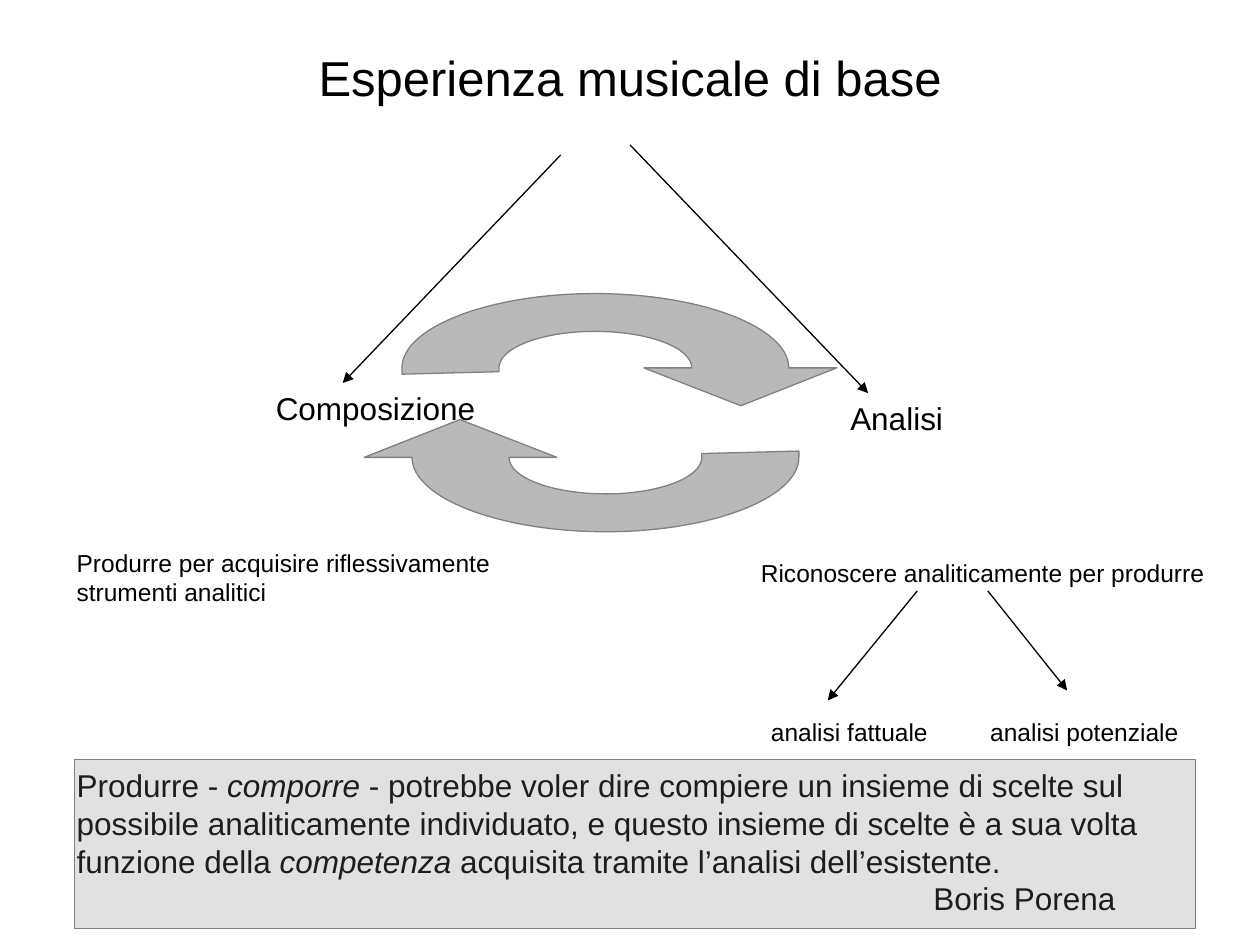
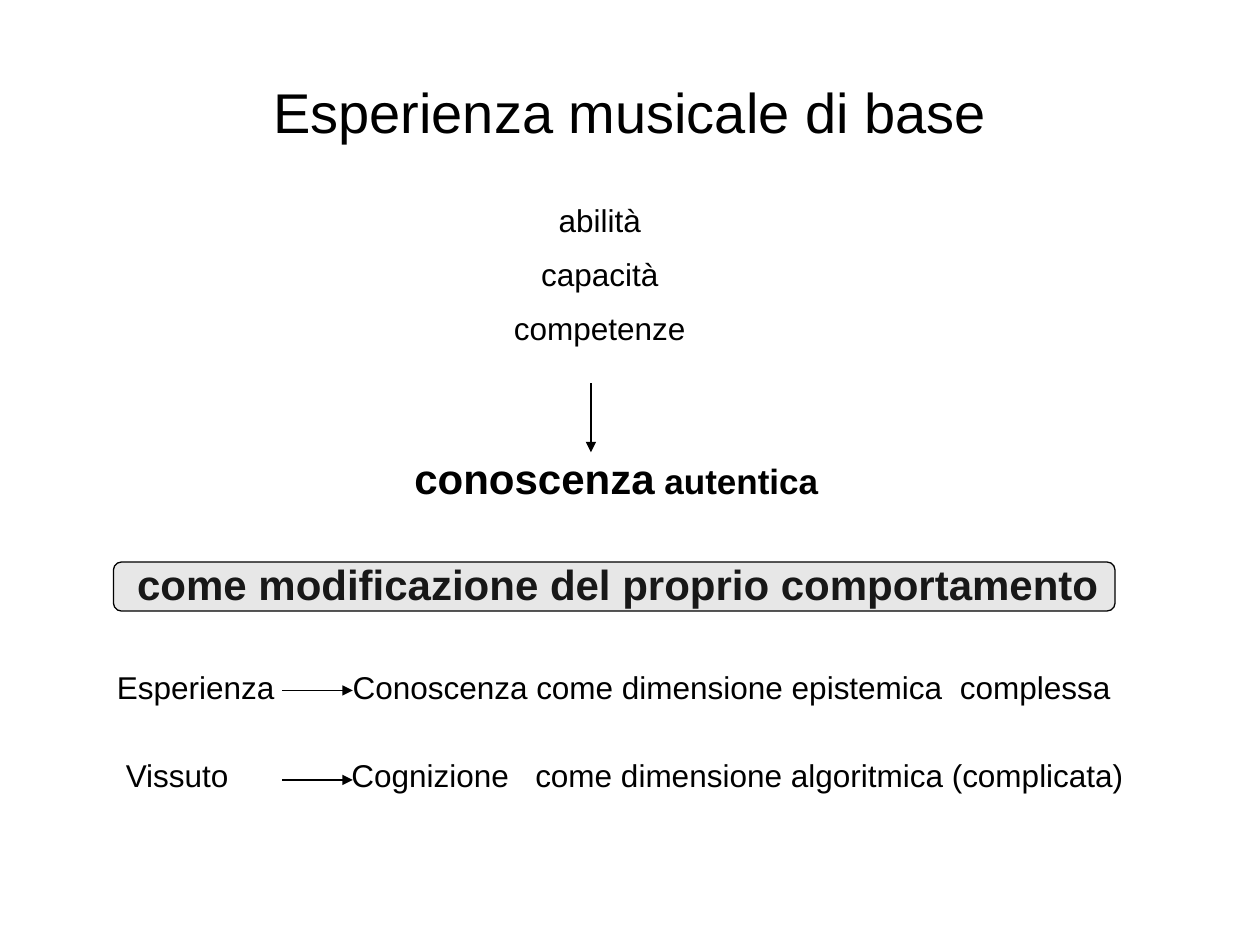
from lxml.etree import SubElement
from pptx import Presentation
from pptx.dml.color import RGBColor
from pptx.enum.shapes import MSO_CONNECTOR, MSO_SHAPE
from pptx.enum.text import MSO_ANCHOR, MSO_AUTO_SIZE, PP_ALIGN
from pptx.oxml.ns import qn
from pptx.util import Inches, Pt

FONT = "Arial"
BLACK = "000000"
GREY = "808080"
LINE_WIDTH = Pt(0.75)
TITLE = "Esperienza musicale di base"

# Upper arrow of the cycle: one point is a straight step, three are a curve.
CYCLE_START = (5.49, 2.92)
CYCLE_STEPS = [
    [(5.49, 2.76), (5.15, 2.63), (4.72, 2.63)],
    [(4.3, 2.63), (3.96, 2.76), (3.96, 2.92)],
    [(3.96, 2.93), (3.96, 2.94), (3.96, 2.95)],
    [(3.19, 2.97)],
    [(3.19, 2.95), (3.19, 2.94), (3.19, 2.92)],
    [(3.19, 2.6), (3.88, 2.33), (4.72, 2.33)],
    [(5.57, 2.33), (6.26, 2.6), (6.26, 2.92)],
    [(6.64, 2.92)],
    [(5.88, 3.22)],
    [(5.11, 2.92)],
]


def color(hex_string):
    return RGBColor.from_string(hex_string)


def write(frame, paragraphs, size=18, bold=False, align=PP_ALIGN.LEFT,
          gap=0, last_indent=0, tabs=()):
    """Fill a text frame; each paragraph is a string or a list of (text, format) runs."""
    frame.word_wrap = True
    for number, content in enumerate(paragraphs):
        paragraph = frame.paragraphs[0] if number == 0 else frame.add_paragraph()
        paragraph.alignment = align
        if number:
            paragraph.space_before = Pt(gap)
        properties = paragraph._p.get_or_add_pPr()
        if last_indent and number == len(paragraphs) - 1:
            properties.set("marL", str(Inches(last_indent)))
        if tabs:
            stops = SubElement(properties, qn("a:tabLst"))
            for position in tabs:
                SubElement(stops, qn("a:tab"), pos=str(Inches(position)), algn="l")
        runs = [(content, {})] if isinstance(content, str) else content
        for text, look in runs:
            run = paragraph.add_run()
            run.text = text
            font = run.font
            font.name = FONT
            font.size = Pt(look.get("size", size))
            font.bold = bold
            font.italic = look.get("italic", False)
            font.color.rgb = color(BLACK)


def add_text(slide, left, top, width, height, *paragraphs,
             inset_top=0.05, **text_format):
    label = slide.shapes.add_textbox(*map(Inches, (left, top, width, height)))
    label.text_frame.margin_top = Inches(inset_top)
    write(label.text_frame, paragraphs, **text_format)


def add_titled_slide(prs, title_height, title_size):
    slide = prs.slides.add_slide(prs.slide_layouts[5])
    title = slide.shapes.title
    title.left, title.top = Inches(0.5), Inches(0.3)
    title.width, title.height = Inches(9), Inches(title_height)
    frame = title.text_frame
    frame.auto_size = MSO_AUTO_SIZE.NONE
    frame.vertical_anchor = MSO_ANCHOR.MIDDLE
    write(frame, [TITLE], size=title_size, align=PP_ALIGN.CENTER)
    return slide


def add_arrow(slide, start, end):
    arrow = slide.shapes.add_connector(
        MSO_CONNECTOR.STRAIGHT, *map(Inches, (*start, *end)))
    arrow.line.color.rgb = color(BLACK)
    arrow.line.width = LINE_WIDTH
    properties = arrow._element.spPr
    SubElement(properties.get_or_add_ln(), qn("a:tailEnd"), type="triangle")
    SubElement(properties, qn("a:effectLst"))


def style_veil(shape, opacity, line_color):
    """Give a shape a see-through grey fill and a thin outline."""
    shape.shadow.inherit = False
    shape.fill.solid()
    shape.fill.fore_color.rgb = color(GREY)
    tint = shape._element.spPr.find(qn("a:solidFill"))[0]
    SubElement(tint, qn("a:alpha"), val=str(opacity * 1000))
    shape.line.color.rgb = color(line_color)
    shape.line.width = LINE_WIDTH


def add_veil(slide, preset, left, top, width, height, opacity, line_color):
    veil = slide.shapes.add_shape(preset, *map(Inches, (left, top, width, height)))
    style_veil(veil, opacity, line_color)


def bend_segments(shape, steps):
    """Turn each three-point step of a freeform into one cubic curve."""
    segments = iter(list(shape._element.iter(qn("a:lnTo"))))
    for step in steps:
        parts = [next(segments) for _ in step]
        if len(parts) == 3:
            outline = parts[0].getparent()
            curve = SubElement(outline, qn("a:cubicBezTo"))
            outline.replace(parts[0], curve)
            curve.append(parts[0][0])
            for part in parts[1:]:
                curve.append(part[0])
                outline.remove(part)


def add_cycle_arrow(slide, place):
    """Draw the cycle arrow with each point moved by place(x, y)."""
    def spot(point):
        return tuple(map(Inches, place(*point)))

    builder = slide.shapes.build_freeform(*spot(CYCLE_START))
    builder.add_line_segments(
        [spot(point) for step in CYCLE_STEPS for point in step], close=True)
    arrow = builder.convert_to_shape()
    bend_segments(arrow, CYCLE_STEPS)
    style_veil(arrow, 55, GREY)


def build_cycle_slide(prs):
    slide = add_titled_slide(prs, 0.62, 28)
    add_text(slide, 2.09, 3.04, 1.89, 0.4, "Composizione")
    add_text(slide, 6.65, 3.12, 1.73, 0.4, "Analisi")
    add_arrow(slide, (4.45, 1.23), (2.72, 3.04))
    add_arrow(slide, (5, 1.15), (6.89, 3.12))

    add_cycle_arrow(slide, lambda x, y: (x, y))
    add_cycle_arrow(slide, lambda x, y: (9.53 - x, 6.55 - y))

    for left, top, width, height, text in (
            (0.51, 4.3, 4.02, 0.57,
             "Produrre per acquisire riflessivamente strumenti analitici"),
            (5.94, 4.38, 3.78, 0.33, "Riconoscere analiticamente per produrre"),
            (6.02, 5.64, 1.5, 0.33, "analisi fattuale"),
            (7.76, 5.64, 1.89, 0.33, "analisi potenziale")):
        add_text(slide, left, top, width, height, text, size=14)
    add_arrow(slide, (7.28, 4.69), (6.57, 5.56))
    add_arrow(slide, (7.84, 4.69), (8.47, 5.48))

    quote = [
        ("Produrre - ", {}),
        ("comporre", {"italic": True}),
        (" - potrebbe voler dire compiere un insieme di scelte sul possibile "
         "analiticamente individuato, e questo insieme di scelte è a sua volta "
         "funzione della ", {}),
        ("competenza", {"italic": True}),
        (" acquisita tramite l’analisi dell’esistente.", {}),
    ]
    add_text(slide, 0.51, 6.03, 9.06, 1.3, quote, "Boris Porena", last_indent=6.8)
    add_veil(slide, MSO_SHAPE.RECTANGLE, 0.59, 6.03, 8.9, 1.34, 23, GREY)


def build_knowledge_slide(prs):
    slide = add_titled_slide(prs, 1.17, 32)
    add_text(slide, 3.58, 1.55, 2.36, 1.3, "abilità", "capacità", "competenze",
             align=PP_ALIGN.CENTER, gap=9)
    add_text(slide, 3.19, 3.04, 3.86, 2.03,
             [("conoscenza", {}), (" autentica", {"size": 20})],
             size=24, bold=True, inset_top=0.55)
    add_text(slide, 0.43, 4.38, 8.98, 0.5,
             "come modificazione del proprio comportamento",
             size=24, bold=True, last_indent=0.56)
    add_veil(slide, MSO_SHAPE.ROUNDED_RECTANGLE, 0.9, 4.46, 7.95, 0.39, 19, BLACK)
    add_arrow(slide, (4.69, 3.04), (4.69, 3.59))

    add_text(slide, 0.83, 5.25, 8.27, 0.4,
             "Esperienza\tConoscenza come dimensione epistemica\tcomplessa",
             tabs=(1.87, 6.69))
    add_arrow(slide, (2.24, 5.48), (2.8, 5.48))
    add_text(slide, 0.9, 5.95, 8.43, 0.85,
             "Vissuto\tCognizione\tcome dimensione algoritmica (complicata)",
             tabs=(1.79, 3.25))
    add_arrow(slide, (2.24, 6.19), (2.8, 6.19))


def main():
    prs = Presentation()
    prs.slide_width, prs.slide_height = Inches(10), Inches(7.5)
    build_cycle_slide(prs)
    build_knowledge_slide(prs)
    prs.save("out.pptx")


if __name__ == "__main__":
    main()
